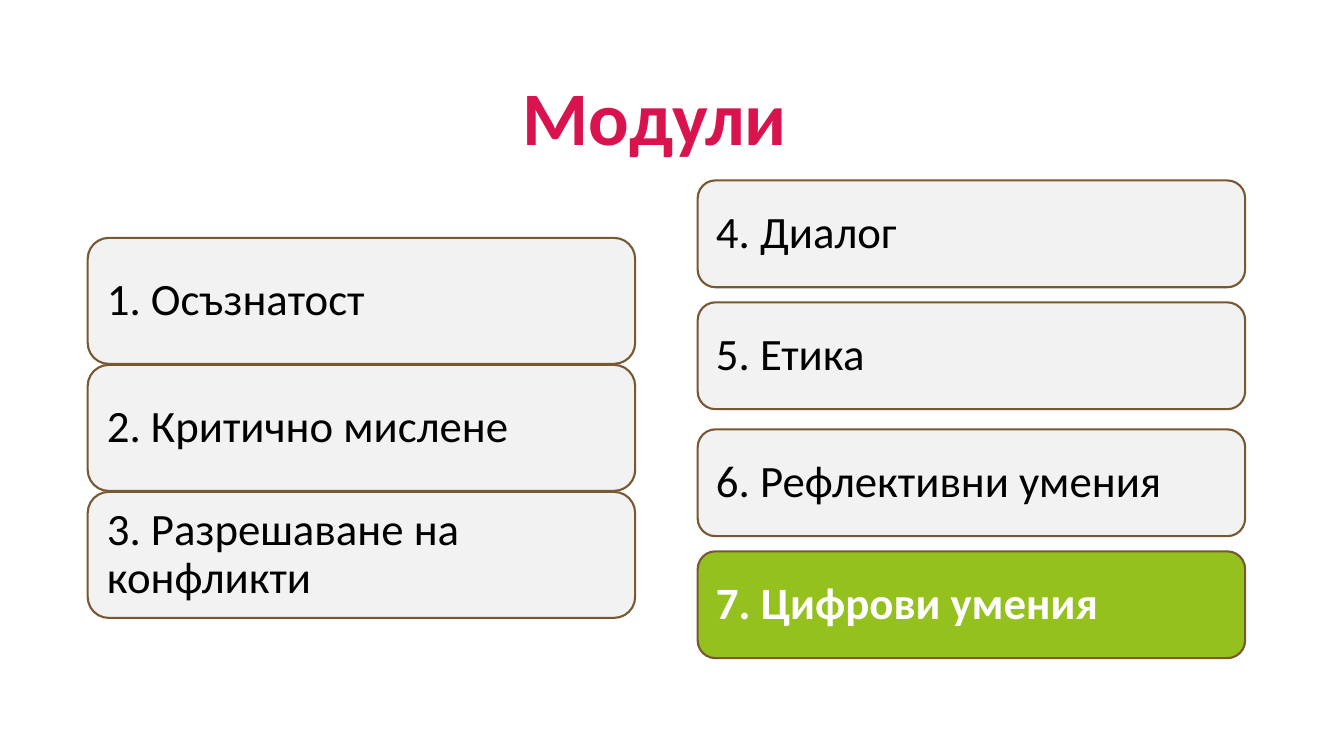
"""Builds the slide that lists the seven training modules."""
from pptx import Presentation
from pptx.dml.color import RGBColor
from pptx.enum.shapes import MSO_SHAPE as Shape
from pptx.enum.text import MSO_ANCHOR as Anchor, PP_ALIGN as Align
from pptx.util import Inches, Pt


def color(value):
    return RGBColor.from_string(value)


def write(frame, text, size, ink, bold, align, anchor):
    frame.text = text
    frame.word_wrap = True
    frame.vertical_anchor = anchor
    paragraph = frame.paragraphs[0]
    paragraph.alignment = align
    paragraph.line_spacing = 0.9
    font = paragraph.runs[0].font
    font.name = "Calibri"
    font.size = Pt(size)
    font.bold = bold
    font.color.rgb = color(ink)


prs = Presentation()
prs.slide_width = Inches(13.33)
prs.slide_height = Inches(7.5)
slide = prs.slides.add_slide(prs.slide_layouts[6])

title = slide.shapes.add_textbox(Inches(0.01), Inches(-0.3), Inches(12.97), Inches(1.95))
write(title.text_frame, "Модули", 54, "D8134D", True, Align.CENTER, Anchor.BOTTOM)

columns = [
    (0.87, 1.25, [(2.36, "1. Осъзнатост"),
                  (3.62, "2. Критично мислене"),
                  (4.88, "3. Разрешаване на конфликти")]),
    (6.92, 1.06, [(1.79, "4. Диалог"),
                  (3.0, "5. Етика"),
                  (4.26, "6. Рефлективни умения"),
                  (5.47, "7. Цифрови умения")]),
]
current_module = "7. Цифрови умения"

for left, height, modules in columns:
    for top, name in modules:
        current = name == current_module
        module = slide.shapes.add_shape(
            Shape.ROUNDED_RECTANGLE, Inches(left), Inches(top), Inches(5.43), Inches(height))
        module.shadow.inherit = False
        module.fill.solid()
        module.fill.fore_color.rgb = color("95C11F" if current else "F2F2F2")
        module.line.color.rgb = color("785832")
        module.line.width = Pt(1.5)
        frame = module.text_frame
        frame.margin_left = frame.margin_right = Inches(0.13)
        frame.margin_top = frame.margin_bottom = Inches(0.13)
        write(frame, name, 32, "FFFFFF" if current else "000000", current,
              Align.LEFT, Anchor.MIDDLE)

prs.save("out.pptx")
